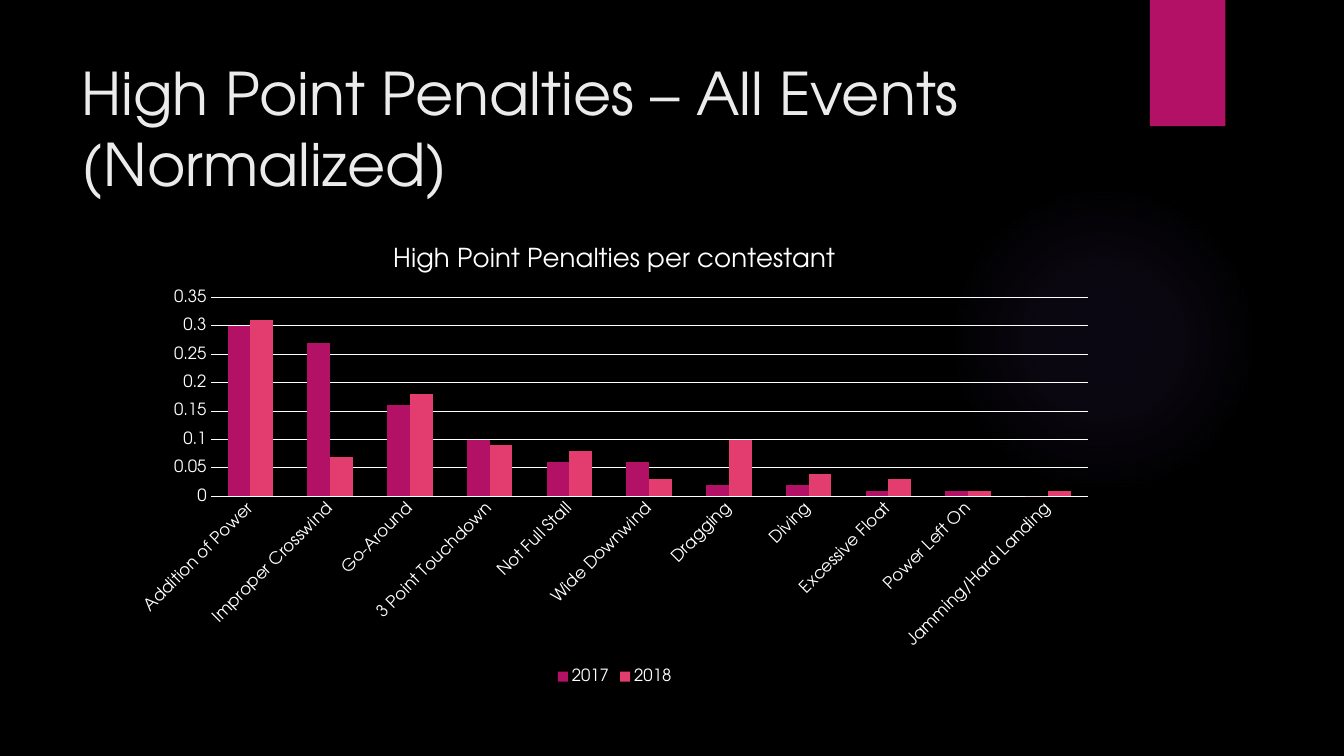
"""Builds the high point penalties slide with its clustered column chart."""
from dataclasses import dataclass

from pptx import Presentation
from pptx.chart.axis import CategoryAxis, ValueAxis
from pptx.chart.chart import Chart
from pptx.chart.data import CategoryChartData
from pptx.dml.color import RGBColor
from pptx.enum.chart import XL_CHART_TYPE, XL_LEGEND_POSITION, XL_TICK_MARK
from pptx.enum.shapes import MSO_SHAPE
from pptx.enum.text import MSO_ANCHOR, PP_ALIGN
from pptx.oxml import parse_xml
from pptx.oxml.ns import nsdecls
from pptx.slide import Slide
from pptx.text.text import Font
from pptx.util import Cm, Pt

COLUMNS = XL_CHART_TYPE.COLUMN_CLUSTERED
BOTTOM = XL_LEGEND_POSITION.BOTTOM
NO_TICK = XL_TICK_MARK.NONE
ELLIPSE, RECTANGLE = MSO_SHAPE.OVAL, MSO_SHAPE.RECTANGLE
MIDDLE, LEFT = MSO_ANCHOR.MIDDLE, PP_ALIGN.LEFT

FONT = "TeX Gyre Adventor"
BLACK = RGBColor(0x00, 0x00, 0x00)
WHITE = RGBColor(0xFF, 0xFF, 0xFF)
LIGHT = RGBColor(0xEB, 0xEB, 0xEB)
MAGENTA = RGBColor(0xB3, 0x11, 0x66)
ROSE = RGBColor(0xE3, 0x3D, 0x6F)
VIOLET = RGBColor(0x9B, 0x6B, 0xF2)


@dataclass(frozen=True)
class Box:
    """Position and size in centimetres."""
    left: float
    top: float
    width: float
    height: float

    def lengths(self) -> tuple[Cm, Cm, Cm, Cm]:
        """Return left, top, width and height as lengths."""
        return Cm(self.left), Cm(self.top), Cm(self.width), Cm(self.height)


@dataclass(frozen=True)
class Season:
    """One year of penalties per contestant."""
    name: str
    color: RGBColor
    values: tuple[float, ...]


GLOW = Box(23.9, 4.65, 7.82, 7.82)
TAB = Box(28.98, 0, 1.9, 3.18)
TITLE = Box(1.8, 1.27, 26.14, 3.89)
CHART = Box(3.07, 5.69, 24.84, 11.66)
PLOT = {"x": 0.09, "y": 0.155, "w": 0.89, "h": 0.43}
GLOW_STOPS = ((0, 7), (36, 6), (69, 0))
PENALTIES = (
    "Addition of Power", "Improper Crosswind", "Go-Around", "3 Point Touchdown",
    "Not Full Stall", "Wide Downwind", "Dragging", "Diving", "Excessive Float",
    "Power Left On", "Jamming/Hard Landing",
)
SEASONS = (
    Season("2017", MAGENTA,
           (0.3, 0.27, 0.16, 0.1, 0.06, 0.06, 0.02, 0.02, 0.01, 0.01, 0)),
    Season("2018", ROSE,
           (0.31, 0.07, 0.18, 0.09, 0.08, 0.03, 0.1, 0.04, 0.03, 0.01, 0.01)),
)


def format_font(font: Font, *, size: float, color: RGBColor = WHITE) -> None:
    """Apply the slide typeface, size and colour."""
    font.name = FONT
    font.size = Pt(size)
    font.bold = False
    font.color.rgb = color


def add_glow(s: Slide) -> None:
    """Add the faint radial glow."""
    sp = s.shapes.add_shape(ELLIPSE, *GLOW.lengths())
    sp.shadow.inherit = False
    sp.line.fill.background()
    sp.fill.background()
    stops = "".join(
        f'<a:gs pos="{pos * 1000}"><a:srgbClr val="{VIOLET}">'
        f'<a:alpha val="{alpha * 1000}"/></a:srgbClr></a:gs>'
        for pos, alpha in GLOW_STOPS)
    gradient = parse_xml(
        f'<a:gradFill {nsdecls("a")}><a:gsLst>{stops}</a:gsLst><a:path path="circle">'
        '<a:fillToRect l="50000" t="50000" r="50000" b="50000"/></a:path></a:gradFill>')
    empty = sp._element.spPr.xpath("a:noFill")[0]
    empty.getparent().replace(empty, gradient)


def add_tab(s: Slide) -> None:
    """Add the coloured tab at the top edge."""
    sp = s.shapes.add_shape(RECTANGLE, *TAB.lengths())
    sp.shadow.inherit = False
    sp.fill.solid()
    sp.fill.fore_color.rgb = MAGENTA
    sp.line.fill.background()


def set_title(s: Slide, text: str) -> None:
    """Place and format the slide title."""
    sp = s.shapes.title
    sp.left, sp.top, sp.width, sp.height = TITLE.lengths()
    tf = sp.text_frame
    tf.word_wrap = True
    tf.vertical_anchor = MIDDLE
    p = tf.paragraphs[0]
    p.alignment = LEFT
    r = p.add_run()
    r.text = text
    format_font(r.font, size=42, color=LIGHT)


def format_axis(axis: CategoryAxis | ValueAxis) -> None:
    """Give an axis plain labels without line or ticks."""
    axis.major_tick_mark = axis.minor_tick_mark = NO_TICK
    axis.format.line.fill.background()
    format_font(axis.tick_labels.font, size=12)


def format_axes(chart: Chart) -> None:
    """Format both axes, the gridlines and the slanted labels."""
    cat, val = chart.category_axis, chart.value_axis
    format_axis(cat)
    format_axis(val)
    cat._element.xpath("c:txPr/a:bodyPr")[0].set("rot", "-2700000")
    val.minimum_scale, val.maximum_scale, val.major_unit = 0, 0.35, 0.05
    line = val.major_gridlines.format.line
    line.color.rgb = WHITE
    line.width = Pt(0.75)


def place_plot(chart: Chart) -> None:
    """Fix the inner plot area as fractions of the chart."""
    area = chart._chartSpace.chart.plotArea
    for old in area.xpath("c:layout"):
        area.remove(old)
    modes = "".join(f'<c:{k}Mode val="edge"/>' for k in "xy")
    sizes = "".join(f'<c:{k} val="{v}"/>' for k, v in PLOT.items())
    area.insert(0, parse_xml(
        f'<c:layout {nsdecls("c")}><c:manualLayout><c:layoutTarget val="inner"/>'
        f'{modes}{sizes}</c:manualLayout></c:layout>'))


def add_penalty_chart(s: Slide) -> None:
    """Add the chart of penalties per contestant."""
    data = CategoryChartData()
    data.categories = PENALTIES
    for season in SEASONS:
        data.add_series(season.name, season.values)
    chart = s.shapes.add_chart(COLUMNS, *CHART.lengths(), data).chart
    format_font(chart.font, size=10)
    chart.has_title = True
    p = chart.chart_title.text_frame.paragraphs[0]
    r = p.add_run()
    r.text = "High Point Penalties per contestant"
    format_font(r.font, size=18.6)
    chart.has_legend = True
    chart.legend.position = BOTTOM
    chart.legend.include_in_layout = False
    format_font(chart.legend.font, size=12)
    plot = chart.plots[0]
    plot.gap_width = 150
    plot.overlap = 0
    plot.vary_by_categories = False
    for series, season in zip(plot.series, SEASONS):
        series.format.fill.solid()
        series.format.fill.fore_color.rgb = season.color
    format_axes(chart)
    place_plot(chart)


def main() -> None:
    """Build and save the slide."""
    prs = Presentation()
    prs.slide_width, prs.slide_height = Cm(33.87), Cm(19.05)
    s = prs.slides.add_slide(prs.slide_layouts[5])
    s.background.fill.solid()
    s.background.fill.fore_color.rgb = BLACK
    add_glow(s)
    add_tab(s)
    set_title(s, "High Point Penalties – All Events (Normalized)")
    add_penalty_chart(s)
    prs.save("out.pptx")


if __name__ == "__main__":
    main()
